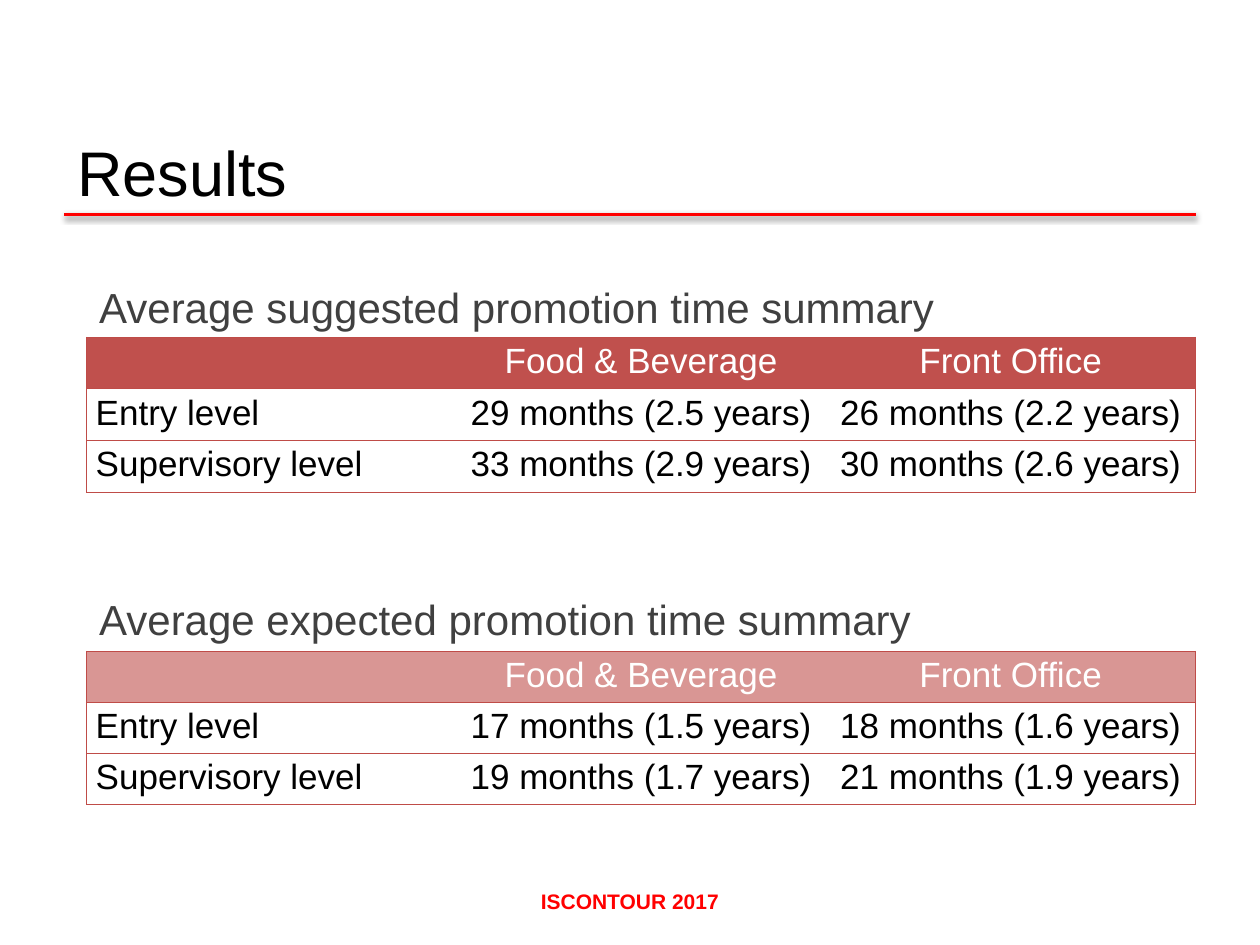
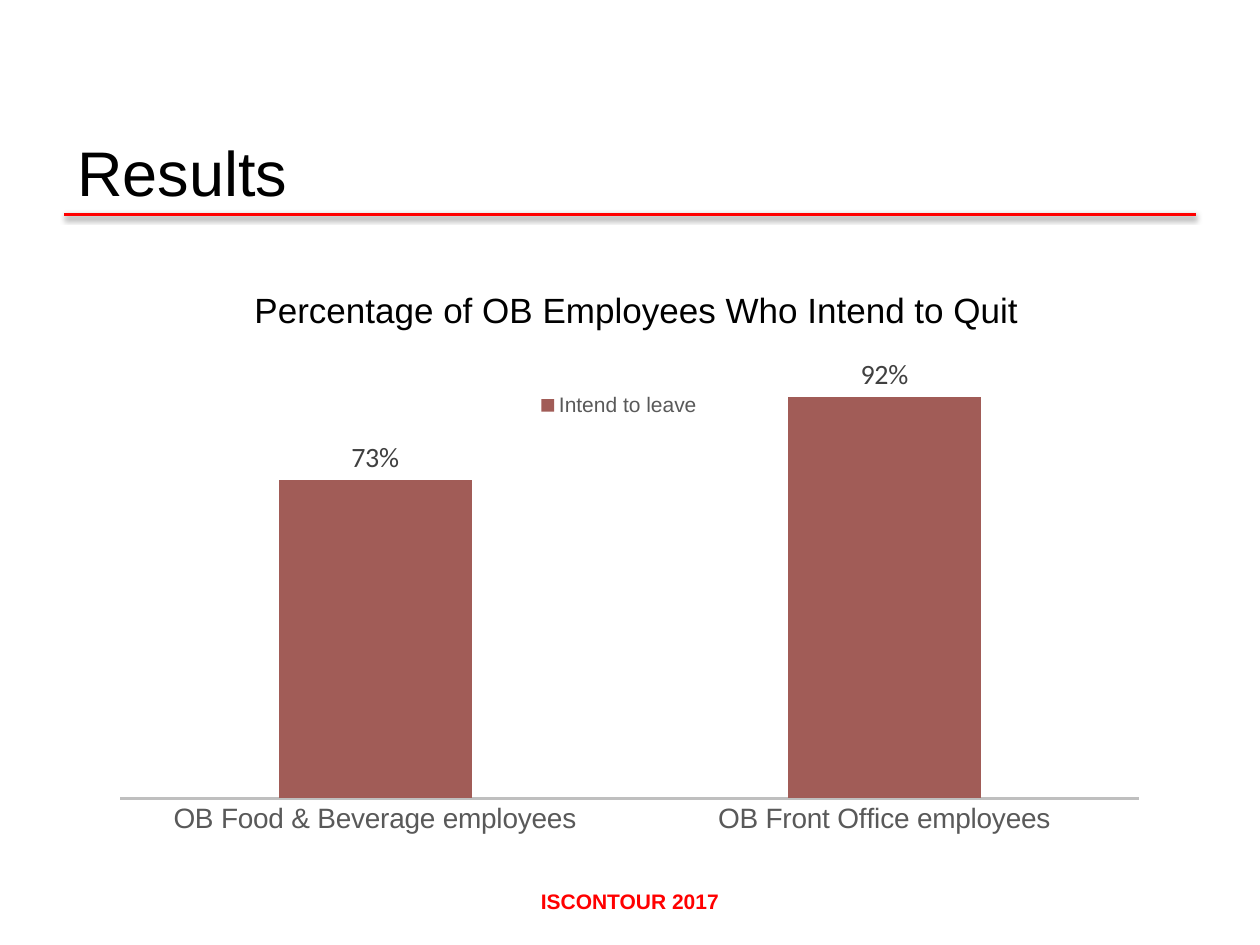
from lxml import etree
from pptx import Presentation
from pptx.chart.data import CategoryChartData
from pptx.dml.color import RGBColor
from pptx.enum.chart import XL_CHART_TYPE as ChartType, XL_LABEL_POSITION as LabelPos
from pptx.enum.chart import XL_LEGEND_POSITION as LegendPos, XL_TICK_MARK as Tick
from pptx.enum.shapes import MSO_CONNECTOR as Connector
from pptx.enum.text import MSO_ANCHOR as Anchor, PP_ALIGN as Align
from pptx.oxml import parse_xml
from pptx.oxml.ns import nsdecls, qn
from pptx.util import Cm, Pt

COLORS = {
    "black": "000000", "white": "FFFFFF", "red": "FF0000", "caption": "404040",
    "label": "595959", "axis": "BFBFBF", "bar": "A15C57", "border": "BF4C48",
    "suggested": "C0504D", "expected": "D99694",
}
DEPARTMENTS = ["", "Food & Beverage", "Front Office"]


class Deck:
    """Holds the deck style and the current slide, with one method per element."""

    def __init__(self):
        self.prs = Presentation()
        self.prs.slide_width, self.prs.slide_height = Cm(25.4), Cm(19.05)
        self.slide = None

    def color(self, name):
        return RGBColor.from_string(COLORS[name])

    def font(self, font, size, color, name="Arial", bold=False):
        font.size, font.name, font.bold = Pt(size), name, bold
        font.color.rgb = self.color(color)

    def add_slide(self, title):
        self.slide = self.prs.slides.add_slide(self.prs.slide_layouts[5])
        self.rule(1.3, 24.1, 4.32)
        self.text("ISCONTOUR 2017", 8.1, 17.78, 9.2, 0.76, 12, "red", Align.CENTER, True)
        sp = self.slide.shapes.title
        sp.left, sp.top, sp.width, sp.height = Cm(1.3), Cm(0.53), Cm(22.81), Cm(3.81)
        tf = sp.text_frame
        tf.text, tf.vertical_anchor = title, Anchor.BOTTOM
        p = tf.paragraphs[0]
        p.alignment = Align.LEFT
        self.font(p.font, 36, "black")

    def rule(self, x1, x2, y):
        line = self.slide.shapes.add_connector(Connector.STRAIGHT, Cm(x1), Cm(y), Cm(x2), Cm(y))
        line.line.color.rgb, line.line.width = self.color("red"), Pt(2)
        line._element.spPr.append(parse_xml(
            f'<a:effectLst {nsdecls("a")}>'
            f'<a:outerShdw blurRad="{Pt(3.1)}" dist="{Pt(1.6)}" dir="5400000" rotWithShape="0">'
            f'<a:srgbClr val="{COLORS["black"]}"><a:alpha val="38000"/></a:srgbClr>'
            '</a:outerShdw></a:effectLst>'))

    def text(self, text, x, y, w, h, size, color, align=Align.LEFT, bold=False):
        tf = self.slide.shapes.add_textbox(Cm(x), Cm(y), Cm(w), Cm(h)).text_frame
        tf.word_wrap, tf.text = True, text
        p = tf.paragraphs[0]
        p.alignment = align
        self.font(p.font, size, color, bold=bold)

    def borders(self, cell, left, right):
        sides = {"L": left, "R": right, "T": True, "B": True}
        tcPr = cell._tc.get_or_add_tcPr()
        for i, (side, drawn) in enumerate(sides.items()):
            fill = "<a:noFill/>"
            if drawn:
                fill = f'<a:solidFill><a:srgbClr val="{COLORS["border"]}"/></a:solidFill>'
            tcPr.insert(i, parse_xml(
                f'<a:ln{side} {nsdecls("a")} w="{Pt(0.75)}">{fill}</a:ln{side}>'))

    def table(self, rows, y, row_height, header):
        count = len(rows[0])
        table = self.slide.shapes.add_table(
            len(rows), count, Cm(1.75), Cm(y), Cm(22.35), Cm(row_height * len(rows))).table
        table.first_row = table.horz_banding = False
        for i, row in enumerate(rows):
            for j, text in enumerate(row):
                cell = table.cell(i, j)
                cell.text = text
                cell.margin_left = cell.margin_right = Cm(0.18)
                cell.margin_top = cell.margin_bottom = Cm(0.09)
                p = cell.text_frame.paragraphs[0]
                p.alignment = Align.CENTER if j else Align.LEFT
                self.font(p.font, 20, "black" if i else "white")
                if i:
                    cell.fill.background()
                else:
                    cell.fill.solid()
                    cell.fill.fore_color.rgb = self.color(header)
                self.borders(cell, j == 0, j == count - 1)

    def place(self, element, index, inner, **box):
        for old in element.findall(qn("c:layout")):
            element.remove(old)
        layout = etree.Element(qn("c:layout"))
        manual = etree.SubElement(layout, qn("c:manualLayout"))
        if inner:
            etree.SubElement(manual, qn("c:layoutTarget"), val="inner")
        for mode in ("xMode", "yMode"):
            etree.SubElement(manual, qn(f"c:{mode}"), val="edge")
        for key, value in box.items():
            etree.SubElement(manual, qn(f"c:{key}"), val=str(value))
        element.insert(index, layout)

    def column_chart(self, name, values, x, y, w, h):
        data = CategoryChartData(number_format="0%")
        data.categories = list(values)
        data.add_series(name, list(values.values()))
        chart = self.slide.shapes.add_chart(
            ChartType.COLUMN_CLUSTERED, Cm(x), Cm(y), Cm(w), Cm(h), data).chart
        self.font(chart.font, 10, "black", "Calibri")
        chart.has_title = False

        plot = chart.plots[0]
        plot.gap_width, plot.overlap, plot.vary_by_categories = 164, -22, False
        fill = plot.series[0].format.fill
        fill.solid()
        fill.fore_color.rgb = self.color("bar")
        plot.has_data_labels = True
        labels = plot.data_labels
        labels.show_value, labels.position = True, LabelPos.OUTSIDE_END
        labels.number_format, labels.number_format_is_linked = "0%", False
        self.font(labels.font, 16, "caption", "Calibri")

        axis = chart.category_axis
        axis.major_tick_mark = axis.minor_tick_mark = Tick.NONE
        axis.format.line.color.rgb, axis.format.line.width = self.color("axis"), Pt(1.5)
        self.font(axis.tick_labels.font, 16, "label")
        scale = chart.value_axis
        scale.minimum_scale, scale.maximum_scale = 0, 1
        scale.has_major_gridlines = scale.visible = False

        chart.has_legend = True
        legend = chart.legend
        legend.position, legend.include_in_layout = LegendPos.TOP, False
        self.font(legend.font, 12, "label")
        plot_area = chart._chartSpace.chart.plotArea
        self.place(plot_area, 0, True, x=0.02, y=0.1, w=0.96, h=0.81)
        self.place(legend._element, 1, False, x=0.41, y=0.15, w=0.16, h=0.06)


def main():
    deck = Deck()

    deck.add_slide("Results")
    summaries = [
        ("suggested", 5.56, 6.8, 1.04,
         [["Entry level", "29 months (2.5 years)", "26 months (2.2 years)"],
          ["Supervisory level", "33 months (2.9 years)", "30 months (2.6 years)"]]),
        ("expected", 11.84, 13.13, 0.98,
         [["Entry level", "17 months (1.5 years)", "18 months (1.6 years)"],
          ["Supervisory level", "19 months (1.7 years)", "21 months (1.9 years)"]]),
    ]
    for kind, caption_y, table_y, row_height, levels in summaries:
        deck.text(f"Average {kind} promotion time summary",
                  1.75, caption_y, 19.81, 1.27, 24, "caption")
        deck.table([DEPARTMENTS] + levels, table_y, row_height, kind)

    deck.add_slide("Results")
    deck.column_chart(
        "Intend to leave",
        {"OB Food & Beverage employees": 0.73, "OB Front Office employees": 0.92},
        2, 6.22, 21.39, 10.85)
    deck.text("Percentage of OB Employees Who Intend to Quit", 4.88, 5.69, 19, 1.12, 20, "black")

    deck.prs.save("out.pptx")


if __name__ == "__main__":
    main()
